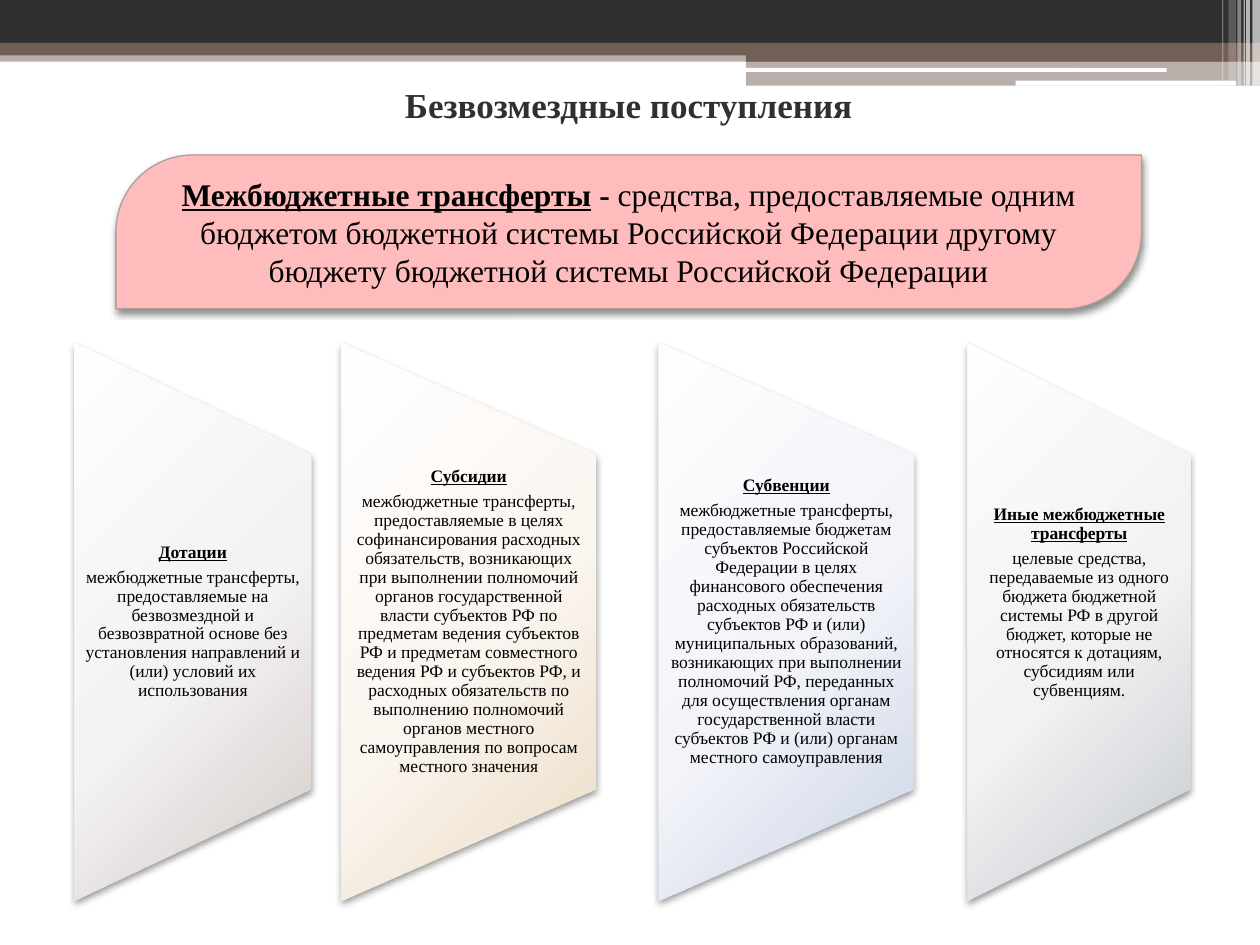
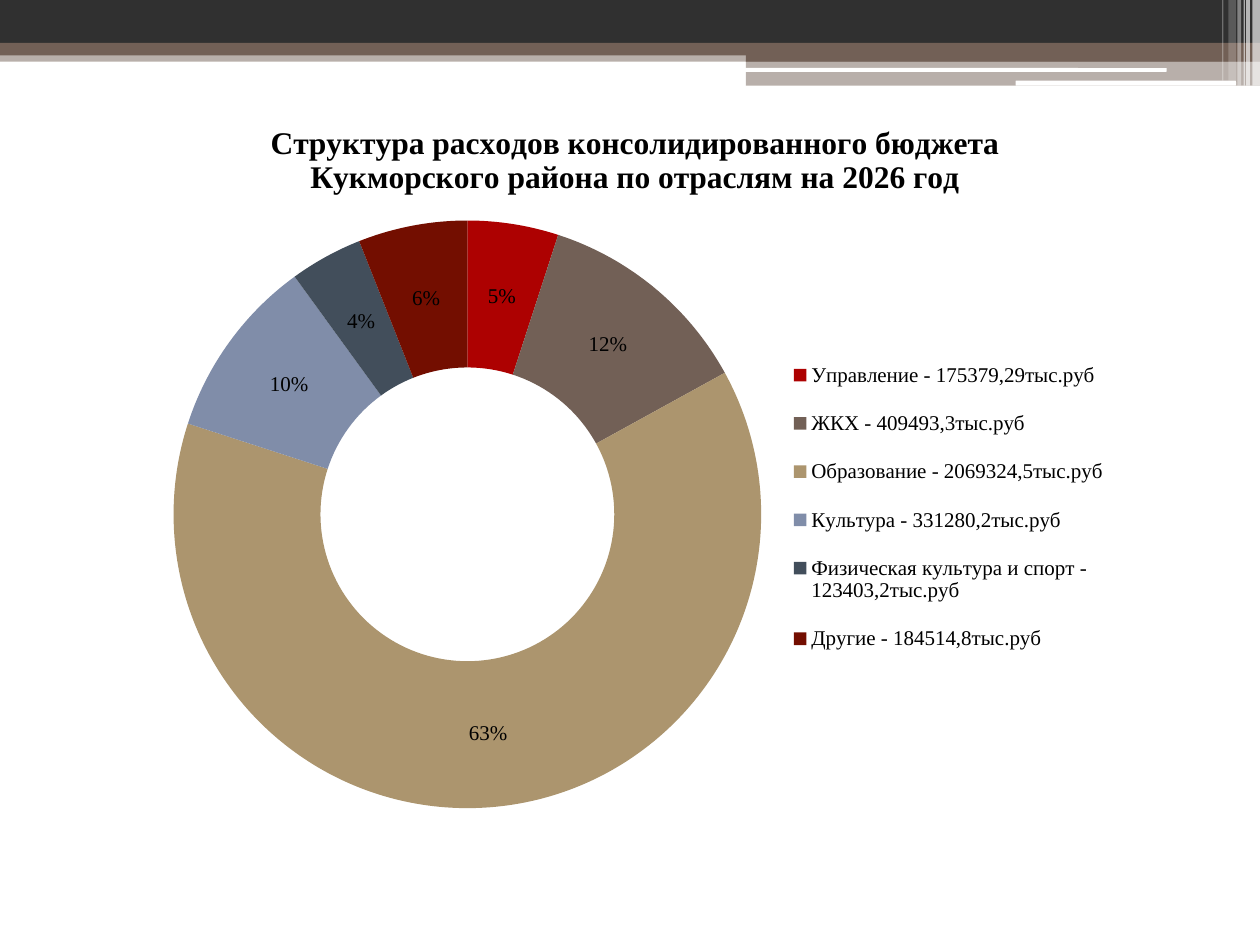
import lxml.etree
import pptx
import pptx.chart.data
import pptx.dml.color
import pptx.enum.chart
import pptx.enum.shapes
import pptx.enum.text
import pptx.oxml
import pptx.oxml.ns
import pptx.util

SHAPE = pptx.enum.shapes.MSO_SHAPE
ANCHOR = pptx.enum.text.MSO_ANCHOR
CENTER = pptx.enum.text.PP_ALIGN.CENTER
qn = pptx.oxml.ns.qn

FONT = "Times New Roman"
DARK, BROWN, WHITE, BLACK = "303030", "726056", "FFFFFF", "000000"
PINK, PINK_EDGE = "FFBCBC", "AF9E95"
COL = ROW = pptx.util.Inches(1)
COLS, ROWS = 10, 7.5

STRIPES = [
    (0, 0.4, 10, 0.09, BROWN, 50), (0, 0, 10, 0.34, DARK, 100),
    (0, 0.34, 10, 0.1, BROWN, 100), (5.92, 0.39, 4.08, 0.1, BROWN, 100),
    (5.92, 0.48, 4.08, 0.2, BROWN, 50),
]
SLITS = [(5.91, 0.54, 3.35, 0.03), (8.06, 0.64, 1.75, 0.04)]
GLINTS = [
    (9.94, 0.06, 0.68, 65), (9.89, 0.03, 0.68, 65), (9.87, 0.01, 0.68, 60),
    (9.82, 0.03, 0.68, 40), (9.75, 0.06, 0.64, 20), (9.7, 0.01, 0.64, 30),
]
TRANSFERS = [
    (0.59, 1.88, 0, ("FEFEFE", "F4F2F2", "D3CBC7"), "Дотации",
     "межбюджетные трансферты, предоставляемые на безвозмездной и безвозвратной "
     "основе без установления направлений и (или) условий их использования"),
    (2.71, 2.02, 0, ("FFFEFE", "FAF6F0", "EBDAC2"), "Субсидии",
     "межбюджетные трансферты, предоставляемые в целях софинансирования расходных "
     "обязательств, возникающих при выполнении полномочий органов государственной "
     "власти субъектов РФ по предметам ведения субъектов РФ и предметам совместного "
     "ведения РФ и субъектов РФ, и расходных обязательств по выполнению полномочий "
     "органов местного самоуправления по вопросам местного значения"),
    (5.23, 2.02, 0, ("FEFEFE", "F2F4F9", "CAD2E6"), "Субвенции",
     "межбюджетные трансферты, предоставляемые бюджетам субъектов Российской "
     "Федерации в целях финансового обеспечения расходных обязательств субъектов РФ "
     "и (или) муниципальных образований, возникающих при выполнении полномочий РФ, "
     "переданных для осуществления органам государственной власти субъектов РФ и "
     "(или) органам местного самоуправления"),
    (7.68, 1.77, 0.3, ("FEFEFE", "F1F2F3", "C5C9CE"), "Иные межбюджетные трансферты",
     "целевые средства, передаваемые из одного бюджета бюджетной системы РФ в другой "
     "бюджет, которые не относятся к дотациям, субсидиям или субвенциям."),
]
EXPENSES = [
    ("Управление - 175379,29тыс.руб", 5, "AD0101"),
    ("ЖКХ - 409493,3тыс.руб", 12, BROWN),
    ("Образование - 2069324,5тыс.руб", 63, "AC956E"),
    ("Культура - 331280,2тыс.руб", 10, "808DA9"),
    ("Физическая культура и спорт - 123403,2тыс.руб", 4, "424E5B"),
    ("Другие - 184514,8тыс.руб", 6, "730E00"),
]


def rgb(value):
    """Turn a hex string into a colour."""
    return pptx.dml.color.RGBColor.from_string(value)


def grid(x, y, w, h):
    """Turn columns and rows into slide lengths."""
    return round(x * COL), round(y * ROW), round(w * COL), round(h * ROW)


def add_child(parent, tag, **attrs):
    """Append a drawing element with the given attributes."""
    return lxml.etree.SubElement(parent, qn(tag), {k: str(v) for k, v in attrs.items()})


def style_font(font, size, bold=False, underline=False, color=BLACK):
    """Format a font."""
    font.name, font.size = FONT, pptx.util.Pt(size)
    font.bold, font.underline = bold, underline
    font.color.rgb = rgb(color)


def write(p, text, spacing=None, after=None, **format):
    """Add a formatted run to a centred paragraph."""
    p.alignment = CENTER
    if spacing:
        p.line_spacing = spacing
    if after:
        p.space_after = pptx.util.Pt(after)
    r = p.add_run()
    r.text = text
    style_font(r.font, **format)


def add_block(slide, kind, box, fill=None, alpha=100):
    """Draw a preset shape without line or shadow."""
    s = slide.shapes.add_shape(kind, *grid(*box))
    s.shadow.inherit = False
    s.line.fill.background()
    if fill:
        s.fill.solid()
        s.fill.fore_color.rgb = rgb(fill)
    if alpha < 100:
        add_child(s.element.spPr.find(".//" + qn("a:srgbClr")), "a:alpha", val=alpha * 1000)
    return s


def cast_shadow(s, blur, alpha):
    """Give a shape a soft shadow below it."""
    effects = s.element.spPr.find(qn("a:effectLst"))
    shadow = add_child(effects, "a:outerShdw", blurRad=pptx.util.Pt(blur),
                       dist=pptx.util.Pt(2), dir=5400000, rotWithShape=0)
    color = add_child(shadow, "a:srgbClr", val=BLACK)
    add_child(color, "a:alpha", val=alpha * 1000)


def fill_glow(s, colors):
    """Fill a shape with a gradient that spreads from beyond its corner."""
    s.fill.gradient()
    grad = s.element.spPr.find(qn("a:gradFill"))
    for child in list(grad):
        grad.remove(child)
    stops = add_child(grad, "a:gsLst")
    for pos, color in zip((0, 55, 100), colors):
        add_child(add_child(stops, "a:gs", pos=pos * 1000), "a:srgbClr", val=color)
    glow = add_child(grad, "a:path", path="circle")
    add_child(glow, "a:fillToRect", l=-40000, t=-90000, r=140000, b=190000)


def add_header_bands(prs, slide):
    """Draw the header bands and move them to the slide master."""
    bands = [add_block(slide, SHAPE.RECTANGLE, stripe[:4], *stripe[4:]) for stripe in STRIPES]
    bands += [add_block(slide, SHAPE.ROUNDED_RECTANGLE, slit, WHITE) for slit in SLITS]
    bands += [add_block(slide, SHAPE.RECTANGLE, (x, 0, w, h), WHITE, alpha)
              for x, w, h, alpha in GLINTS]
    tree = prs.slide_master.shapes.element
    for number, band in enumerate(bands, 100):
        band.element.nvSpPr.cNvPr.set("id", str(number))
        tree.append(band.element)


def set_title(slide, text, box):
    """Place and format the slide title."""
    title = slide.shapes.title
    title.left, title.top, title.width, title.height = grid(*box)
    tf = title.text_frame
    tf.word_wrap = True
    tf.auto_size = pptx.enum.text.MSO_AUTO_SIZE.NONE
    tf.vertical_anchor = ANCHOR.BOTTOM
    write(tf.paragraphs[0], text, size=20, bold=True, color=DARK)


def add_definition(slide, box):
    """Draw the banner that defines the transfers."""
    s = add_block(slide, SHAPE.ROUND_2_DIAG_RECTANGLE, box, PINK)
    s.adjustments[0], s.adjustments[1] = 0.5, 0
    s.line.color.rgb = rgb(PINK_EDGE)
    s.line.width = pptx.util.Pt(0.75)
    cast_shadow(s, blur=4, alpha=45)
    tf = s.text_frame
    tf.word_wrap = True
    tf.vertical_anchor = ANCHOR.MIDDLE
    p = tf.paragraphs[0]
    write(p, "Межбюджетные трансферты", size=18, bold=True, underline=True)
    write(p, " - ", size=18, bold=True)
    write(p, "средства, предоставляемые одним бюджетом бюджетной системы Российской "
          "Федерации другому бюджету бюджетной системы Российской Федерации", size=18)


def add_transfer(slide, box, lift, colors, name, meaning):
    """Draw one kind of transfer as a sideways trapezoid with its text."""
    x, y, w, h = box
    turned = x + (w - h) / 2, y + (h - w) / 2, h, w
    s = add_block(slide, SHAPE.FLOWCHART_MANUAL_OPERATION, turned)
    s.rotation = 270
    fill_glow(s, colors)
    cast_shadow(s, blur=4.1, alpha=40)
    tf = slide.shapes.add_textbox(*grid(x, y + h * 0.2, w, h * 0.6)).text_frame
    tf.word_wrap = True
    tf.vertical_anchor = ANCHOR.MIDDLE
    tf.margin_left = tf.margin_right = pptx.util.Inches(0.07)
    tf.margin_top, tf.margin_bottom = 0, pptx.util.Inches(lift)
    layout = dict(spacing=0.9, after=3.5, size=10)
    write(tf.paragraphs[0], name, bold=True, underline=True, **layout)
    write(tf.add_paragraph(), meaning, **layout)


def set_layout(parent, x, y, w, h, inner=False):
    """Fix a chart part at shares of the chart's size."""
    old = parent.find(qn("c:layout"))
    if old is not None:
        parent.remove(old)
    layout = lxml.etree.Element(qn("c:layout"))
    manual = add_child(layout, "c:manualLayout")
    if inner:
        add_child(manual, "c:layoutTarget", val="inner")
    for tag in ("c:xMode", "c:yMode"):
        add_child(manual, tag, val="edge")
    for tag, share in zip("xywh", (x, y, w, h)):
        add_child(manual, "c:" + tag, val=share)
    position = parent.find(qn("c:legendPos"))
    if position is not None:
        position.addnext(layout)
    else:
        parent.insert(0, layout)


def add_expense_chart(slide, box):
    """Draw the doughnut of expenses by sector."""
    names, shares, colors = zip(*EXPENSES)
    data = pptx.chart.data.CategoryChartData()
    data.categories = names
    data.add_series("Series 1", shares)
    kinds = pptx.enum.chart
    chart = slide.shapes.add_chart(kinds.XL_CHART_TYPE.DOUGHNUT, *grid(*box), data).chart
    style_font(chart.font, 12)
    chart.has_title = True
    write(chart.chart_title.text_frame.paragraphs[0],
          "Структура расходов консолидированного бюджета "
          "Кукморского района по отраслям на 2026 год", size=18, bold=True)
    chart.has_legend = True
    chart.legend.position = kinds.XL_LEGEND_POSITION.RIGHT
    chart.legend.include_in_layout = False
    style_font(chart.legend.font, 12)
    set_layout(chart.legend._element, 0.64, 0.33, 0.3, 0.46)
    plot = chart.plots[0]
    plot.vary_by_categories = True
    set_layout(chart.element.find(".//" + qn("c:plotArea")), 0.07, 0.17, 0.55, 0.8, inner=True)
    chart.element.find(".//" + qn("c:holeSize")).set("val", "50")
    for i, color in enumerate(colors):
        fill = plot.series[0].points[i].format.fill
        fill.solid()
        fill.fore_color.rgb = rgb(color)
    plot.has_data_labels = True
    labels = plot.data_labels
    labels.show_percentage, labels.show_value = True, False
    labels.number_format, labels.number_format_is_linked = "0%", False
    style_font(labels.font, 12)


def build_transfers(slide):
    """Build the slide about transfers."""
    set_title(slide, "Безвозмездные поступления", (0.92, 0.28, 8.14, 0.77))
    add_definition(slide, (0.92, 1.23, 8.14, 1.22))
    for x, w, *content in TRANSFERS:
        add_transfer(slide, (x, 2.72, w, 4.43), *content)


def main():
    """Build and save the presentation."""
    prs = pptx.Presentation()
    prs.slide_width, prs.slide_height = COLS * COL, round(ROWS * ROW)
    title_only, blank = prs.slide_layouts[5], prs.slide_layouts[6]
    slide = prs.slides.add_slide(title_only)
    add_header_bands(prs, slide)
    build_transfers(slide)
    add_expense_chart(prs.slides.add_slide(blank), (0.75, 0.76, 8.58, 5.83))
    prs.save("out.pptx")


if __name__ == "__main__":
    main()
